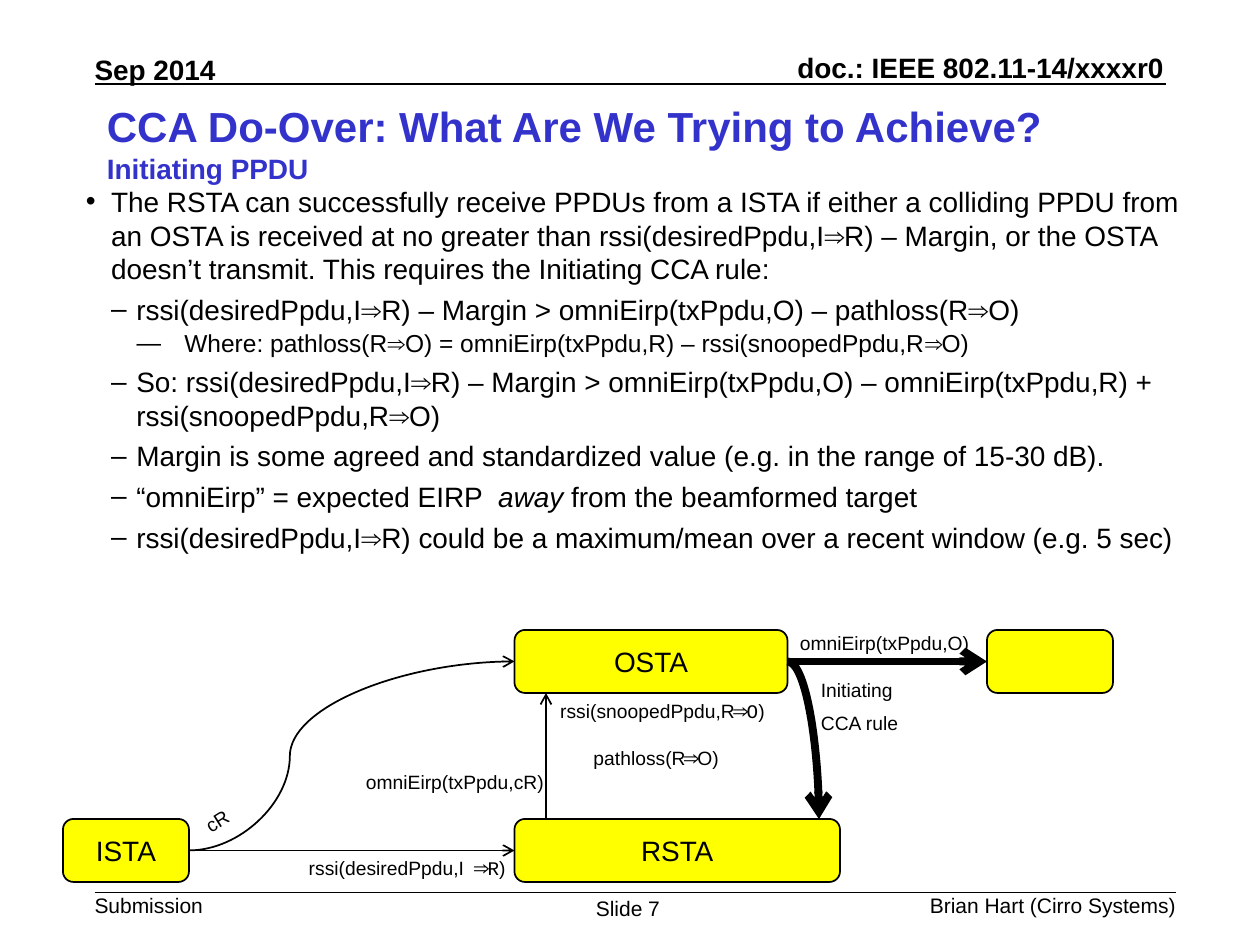
from lxml import etree
from pptx import Presentation
from pptx.dml.color import RGBColor
from pptx.enum.shapes import MSO_CONNECTOR, MSO_SHAPE
from pptx.enum.text import MSO_ANCHOR, PP_ALIGN
from pptx.oxml.ns import qn
from pptx.util import Pt

LEFT, CENTER, RIGHT = PP_ALIGN.LEFT, PP_ALIGN.CENTER, PP_ALIGN.RIGHT
TOP, MIDDLE = MSO_ANCHOR.TOP, MSO_ANCHOR.MIDDLE
STRAIGHT, CURVE = MSO_CONNECTOR.STRAIGHT, MSO_CONNECTOR.CURVE
ROUNDED = MSO_SHAPE.ROUNDED_RECTANGLE

BLACK = RGBColor(0x00, 0x00, 0x00)
TITLE_BLUE = RGBColor(0x33, 0x33, 0xCC)
STATION_YELLOW = RGBColor(0xFF, 0xFF, 0x00)
SANS, MONO = "Arial", "Courier New"

# level: bullet, text indent, hanging indent, size, space before
BULLET_LEVELS = {
    0: ("•", 14.4, 14.4, 16, 0),
    1: ("–", 28.8, 14.4, 16, 4),
    2: ("—", 56.25, 27.25, 14, 1.4),
}

RULE_POINTS = [
    (0, ["The RSTA can successfully receive PPDUs from a ISTA if either a "
         "colliding PPDU from an OSTA is received at no greater than "
         "rssi(desiredPpdu,I⇒R) – Margin, or the OSTA doesn’t transmit. "
         "This requires the Initiating CCA rule:"]),
    (1, ["rssi(desiredPpdu,I⇒R) – Margin > omniEirp(txPpdu,O) – pathloss(R⇒O)"]),
    (2, ["Where: pathloss(R⇒O) = omniEirp(txPpdu,R) – rssi(snoopedPpdu,R⇒O)"]),
    (1, ["So: rssi(desiredPpdu,I⇒R) – Margin > omniEirp(txPpdu,O) – "
         "omniEirp(txPpdu,R) + rssi(snoopedPpdu,R⇒O)"]),
    (1, ["Margin is some agreed and standardized value "
         "(e.g. in the range of 15-30 dB)."]),
    (1, ["“omniEirp” = expected EIRP  ", "away", " from the beamformed target"]),
    (1, ["rssi(desiredPpdu,I⇒R) could be a maximum/mean over a recent window "
         "(e.g. 5 sec)"]),
]

STATIONS = [
    ("ISTA", 36, 468, 72),
    ("RSTA", 294, 468, 186),
    ("OSTA", 294, 360, 156),
    ("", 564, 360, 72),
]

# lines of alternating sans and mono parts, box, alignment, rotation
SIGNAL_LABELS = [
    ([["pathloss(R", "⇒", "O)"]], (300, 423, 150, 27), CENTER, 0),
    ([["rssi(desiredPpdu,I", " ⇒R", ")"]], (138, 486, 158, 27), RIGHT, 0),
    ([["omniEirp(txPpdu,cR)"]], (168, 436.5, 150, 30), RIGHT, 0),
    ([["cR"]], (109.5, 450, 60, 27), LEFT, 328),
    ([["rssi(snoopedPpdu,R", "⇒O", ")"]], (313, 396, 137, 27), LEFT, 0),
    ([["Initiating"], ["CCA rule"]], (462, 384, 126, 42), LEFT, 0),
    ([["omniEirp(txPpdu,O)"]], (450, 357, 150, 27), LEFT, 0),
]


def add_run(paragraph, text, size, font=SANS, color=BLACK, bold=False, italic=False):
    run = paragraph.add_run()
    run.text = text
    run.font.name = font
    run.font.size = Pt(size)
    run.font.color.rgb = color
    run.font.bold = bold
    run.font.italic = italic


def add_text_frame(slide, box, wrap=True, margins=(7.2, 3.6), rotation=0):
    textbox = slide.shapes.add_textbox(*(Pt(length) for length in box))
    textbox.rotation = rotation
    frame = textbox.text_frame
    frame.word_wrap = wrap
    frame.vertical_anchor = TOP
    frame.margin_left = frame.margin_right = Pt(margins[0])
    frame.margin_top = frame.margin_bottom = Pt(margins[1])
    return frame


def next_paragraph(frame, index):
    return frame.add_paragraph() if index else frame.paragraphs[0]


def add_margin_note(slide, text, box, size, align=LEFT, bold=False):
    """Add one line of the page header or footer."""
    frame = add_text_frame(slide, box, wrap=False, margins=(0, 0))
    frame.paragraphs[0].alignment = align
    add_run(frame.paragraphs[0], text, size, bold=bold)


def add_line(slide, start, end, width=1, arrow=False, kind=STRAIGHT):
    line = slide.shapes.add_connector(kind, *(Pt(v) for v in (*start, *end)))
    line.line.color.rgb = BLACK
    line.line.width = Pt(width)
    if arrow:
        etree.SubElement(line.line._get_or_add_ln(), qn("a:tailEnd"), type="arrow")
    etree.SubElement(line._element.spPr, qn("a:effectLst"))
    return line


def add_curved_arrow(slide, start, end, preset, width=1, bend=None):
    curve = add_line(slide, start, end, width, arrow=True, kind=CURVE)
    geometry = curve._element.spPr.find(qn("a:prstGeom"))
    geometry.set("prst", preset)
    if bend is not None:
        guides = geometry.find(qn("a:avLst"))
        etree.SubElement(guides, qn("a:gd"), name="adj1",
                         fmla=f"val {round(bend * 100000)}")


def add_station(slide, name, left, top, width):
    station = slide.shapes.add_shape(ROUNDED, Pt(left), Pt(top), Pt(width), Pt(36))
    station.shadow.inherit = False
    station.fill.solid()
    station.fill.fore_color.rgb = STATION_YELLOW
    station.line.color.rgb = BLACK
    station.line.width = Pt(1)
    if name:
        station.text_frame.vertical_anchor = MIDDLE
        paragraph = station.text_frame.paragraphs[0]
        paragraph.alignment = CENTER
        add_run(paragraph, name, 16)


def add_signal_label(slide, lines, box, align, rotation):
    frame = add_text_frame(slide, box, rotation=rotation)
    for index, parts in enumerate(lines):
        paragraph = next_paragraph(frame, index)
        paragraph.alignment = align
        if index:
            paragraph.space_before = Pt(5.5)
        for position, part in enumerate(parts):
            add_run(paragraph, part, 11, font=MONO if position % 2 else SANS)


def add_rule_points(slide):
    frame = add_text_frame(slide, (42, 102, 648, 402))
    for index, (level, parts) in enumerate(RULE_POINTS):
        bullet, indent, hanging, size, space = BULLET_LEVELS[level]
        paragraph = next_paragraph(frame, index)
        properties = paragraph._p.get_or_add_pPr()
        properties.set("marL", str(Pt(indent)))
        properties.set("indent", str(-Pt(hanging)))
        etree.SubElement(properties, qn("a:buFont"), typeface=SANS)
        etree.SubElement(properties, qn("a:buChar"), char=bullet)
        paragraph.level = level
        if index:
            paragraph.space_before = Pt(space)
        for position, part in enumerate(parts):
            add_run(paragraph, part, size, italic=position % 2 == 1)


def add_title(slide):
    paragraph = add_text_frame(slide, (54, 54, 612, 84)).paragraphs[0]
    add_run(paragraph, "CCA Do-Over: What Are We Trying to Achieve? ", 24,
            color=TITLE_BLUE, bold=True)
    add_run(paragraph, "Initiating PPDU", 16, color=TITLE_BLUE, bold=True)


def add_header_and_footer(slide):
    add_margin_note(slide, "doc.: IEEE 802.11-14/xxxxr0", (417, 29, 248, 19.4),
                    16, RIGHT, bold=True)
    add_margin_note(slide, "Sep 2014", (54, 30.3, 70, 19.4), 16, bold=True)
    add_margin_note(slide, "Submission", (54, 510, 62.5, 14.5), 12)
    add_margin_note(slide, "Slide 7", (340.5, 512, 44.5, 14.5), 12)
    add_margin_note(slide, "Brian Hart (Cirro Systems)", (526, 510, 146, 14.5),
                    12, RIGHT)
    add_line(slide, (54, 48), (666, 48))
    add_line(slide, (54, 510), (672, 510))


def add_signal_paths(slide):
    ista_right, osta_right = (108, 486), (450, 378)
    add_line(slide, ista_right, (294, 486), arrow=True)
    add_line(slide, (312, 468), (312, 396), arrow=True)
    add_line(slide, osta_right, (564, 378), 4.5, arrow=True)
    add_curved_arrow(slide, ista_right, (294, 378), "curvedConnector3", bend=0.31)
    add_curved_arrow(slide, osta_right, (468, 468), "curvedConnector2", 4.5)


def main():
    deck = Presentation()
    deck.slide_width, deck.slide_height = Pt(720), Pt(540)
    slide = deck.slides.add_slide(deck.slide_layouts[6])
    add_header_and_footer(slide)
    add_title(slide)
    add_rule_points(slide)
    for station in STATIONS:
        add_station(slide, *station)
    add_signal_paths(slide)
    for label in SIGNAL_LABELS:
        add_signal_label(slide, *label)
    deck.save("out.pptx")


if __name__ == "__main__":
    main()
